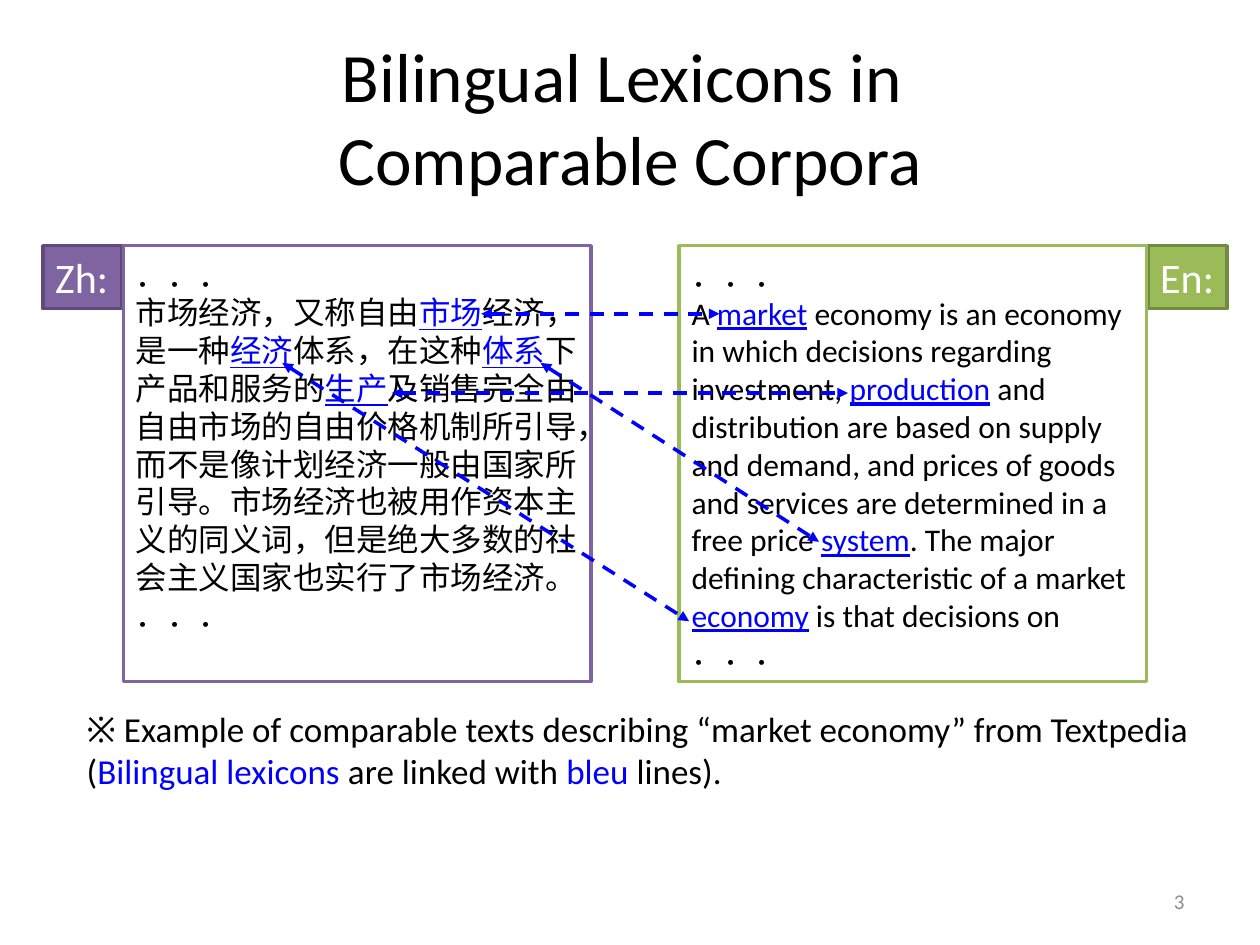
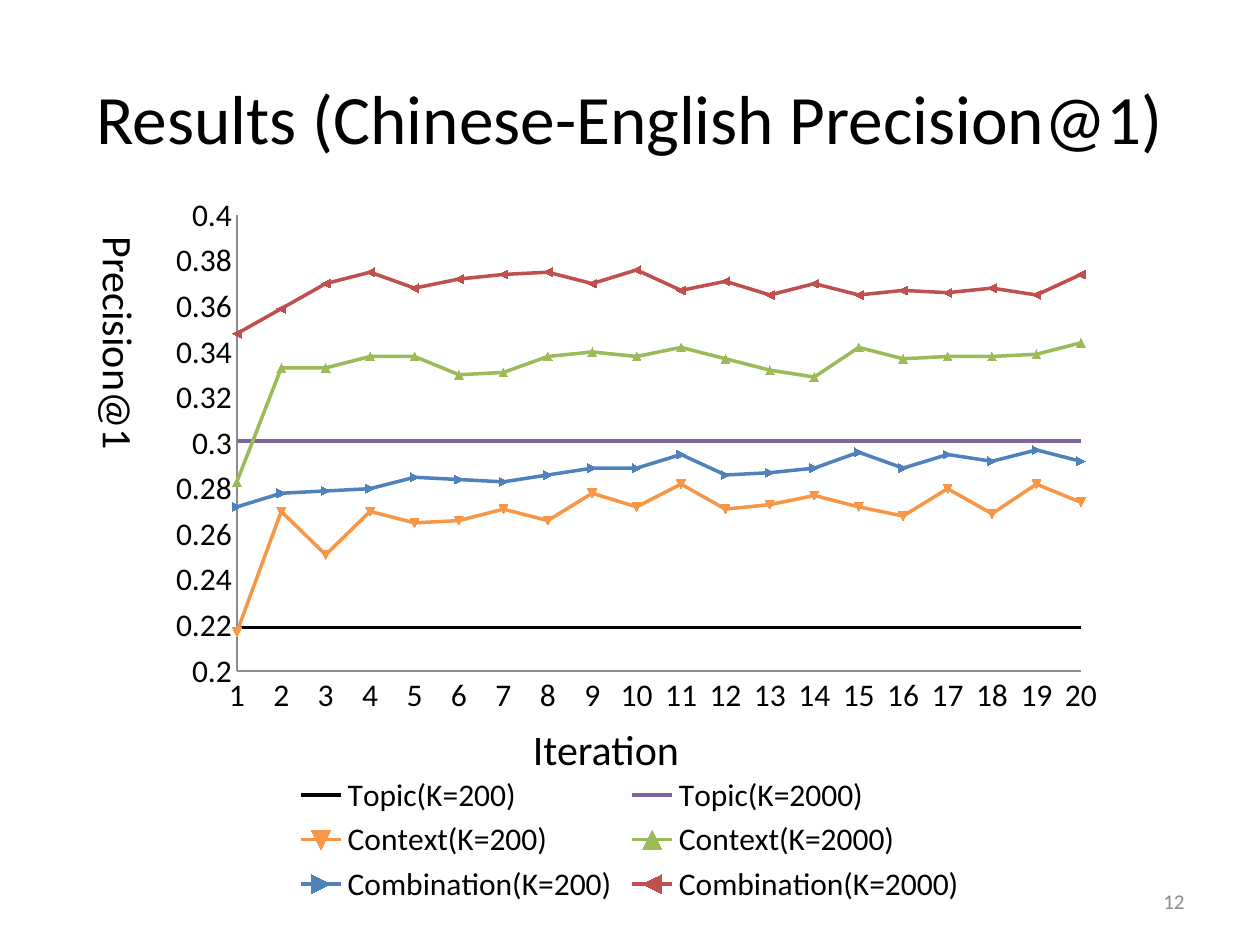
"""Build two slides on bilingual lexicons: linked sample texts and a results chart."""
from dataclasses import dataclass, field
from typing import Any, NamedTuple

import lxml.etree
import pptx
import pptx.chart.data
import pptx.dml.color
import pptx.enum.chart
import pptx.enum.dml
import pptx.enum.shapes
import pptx.enum.text
import pptx.oxml.ns
import pptx.slide
import pptx.util

Pt = pptx.util.Pt
qn = pptx.oxml.ns.qn
ALIGN = pptx.enum.text.PP_ALIGN
ANCHOR = pptx.enum.text.MSO_ANCHOR
HUES = {
    "black": "000000", "white": "FFFFFF", "gray": "8C8C8C", "link": "0000FF",
    "plum": "8064A2", "plum_edge": "5F4A78", "green": "9BBB59", "green_edge": "738A42",
    "orange": "F79646", "blue": "4F81BD", "red": "C0504D",
}
LATIN, ASIAN = "Calibri", "Noto Sans CJK SC"
ROW = 21.6
TOP = 140.4
MIDDLE = {"vertical_anchor": ANCHOR.MIDDLE}
NO_WRAP = {"word_wrap": False}


@dataclass
class Box:
    """Text area; parts of the text between asterisks take the link colour."""
    x: float
    y: float
    w: float
    h: float
    text: list[str]
    size: float
    ink: str = "black"
    fill: str = ""
    edge: str = ""
    under: bool = False
    turn: str = ""
    frame: dict[str, Any] = field(default_factory=dict)
    para: dict[str, Any] = field(default_factory=dict)


class Link(NamedTuple):
    """Two-headed arrow between matching words."""
    x1: float
    y1: float
    x2: float
    y2: float


class Curve(NamedTuple):
    """One line of the chart."""
    name: str
    hue: str
    vals: list[float]
    mark: bool = True


LINKS = [
    Link(275, 179.3, 411.1, 179.3),
    Link(223.9, 224.6, 484.6, 224.6),
    Link(308.9, 207.4, 468, 309.6),
    Link(161.3, 207.4, 393.8, 355),
]
ZH = ("市场经济，又称自由*市场*经济，是一种*经济*体系，在这种*体系*下产品和服务的*生产*及销售完全由"
      "自由市场的自由价格机制所引导，而不是像计划经济一般由国家所引导。市场经济也被用作资本主义的同义词，"
      "但是绝大多数的社会主义国家也实行了市场经济。")
EN = ("A *market* economy is an economy in which decisions regarding investment, *production* and "
      "distribution are based on supply and demand, and prices of goods and services are determined "
      "in a free price *system*. The major defining characteristic of a market *economy* is that "
      "decisions on")
NOTE = ("※ Example of comparable texts describing “market economy” from Textpedia "
        "(*Bilingual lexicons *are linked with *bleu *lines).")
CURVES = [
    Curve("Topic(K=200)", "black", [0.219] * 20, False),
    Curve("Topic(K=2000)", "plum", [0.301] * 20, False),
    Curve("Context(K=200)", "orange", [
        0.217, 0.27, 0.251, 0.27, 0.265, 0.266, 0.271, 0.266, 0.278, 0.272,
        0.282, 0.271, 0.273, 0.277, 0.272, 0.268, 0.28, 0.269, 0.282, 0.274]),
    Curve("Context(K=2000)", "green", [
        0.283, 0.333, 0.333, 0.338, 0.338, 0.33, 0.331, 0.338, 0.34, 0.338,
        0.342, 0.337, 0.332, 0.329, 0.342, 0.337, 0.338, 0.338, 0.339, 0.344]),
    Curve("Combination(K=200)", "blue", [
        0.272, 0.278, 0.279, 0.28, 0.285, 0.284, 0.283, 0.286, 0.289, 0.289,
        0.295, 0.286, 0.287, 0.289, 0.296, 0.289, 0.295, 0.292, 0.297, 0.292]),
    Curve("Combination(K=2000)", "red", [
        0.348, 0.359, 0.37, 0.375, 0.368, 0.372, 0.374, 0.375, 0.37, 0.376,
        0.367, 0.371, 0.365, 0.37, 0.365, 0.367, 0.366, 0.368, 0.365, 0.374]),
]


def tint(name: str) -> pptx.dml.color.RGBColor:
    """Return a named colour."""
    return pptx.dml.color.RGBColor.from_string(HUES[name])


def apply(item: Any, vals: dict[str, Any]) -> None:
    """Set each format value on an object."""
    for key, val in vals.items():
        setattr(item, key, val)


def paint(fill: Any, name: str) -> None:
    """Give a solid colour to a fill."""
    fill.solid()
    fill.fore_color.rgb = tint(name)


def stroke(line: Any, name: str, width: float = 2) -> None:
    """Give a colour and a width to a line."""
    paint(line.fill, name)
    line.width = Pt(width)


def add_run(para: Any, text: str, box: Box, linked: bool) -> None:
    """Add one styled run to a paragraph."""
    run = para.add_run()
    run.text = text
    apply(run.font, {"size": Pt(box.size), "name": LATIN})
    if linked and box.under:
        run.font.underline = True
    paint(run.font.fill, "link" if linked else box.ink)
    lxml.etree.SubElement(run.font._element, qn("a:ea"), typeface=ASIAN)


def add_box(slide: pptx.slide.Slide, box: Box) -> None:
    """Draw a text area, with fill and edge if it has them."""
    place = [Pt(v) for v in (box.x, box.y, box.w, box.h)]
    if box.fill:
        shape = slide.shapes.add_shape(pptx.enum.shapes.MSO_SHAPE.RECTANGLE, *place)
        shape.shadow.inherit = False
        paint(shape.fill, box.fill)
        stroke(shape.line, box.edge)
    else:
        shape = slide.shapes.add_textbox(*place)
    frame = shape.text_frame
    apply(frame, {"word_wrap": True, "vertical_anchor": ANCHOR.TOP} | box.frame)
    if box.turn:
        frame._txBody.bodyPr.set("vert", box.turn)
    for i, text in enumerate(box.text):
        para = frame.add_paragraph() if i else frame.paragraphs[0]
        apply(para, {"alignment": ALIGN.LEFT} | box.para)
        for j, part in enumerate(text.split("*")):
            for k, row in enumerate(part.split("\v")):
                if k:
                    para.add_line_break()
                if row:
                    add_run(para, row, box, j % 2 == 1)


def add_link(slide: pptx.slide.Slide, link: Link) -> None:
    """Draw a dashed arrow with a head at each end."""
    kind = pptx.enum.shapes.MSO_CONNECTOR.STRAIGHT
    arrow = slide.shapes.add_connector(kind, *[Pt(v) for v in link])
    stroke(arrow.line, "link")
    arrow.line.dash_style = pptx.enum.dml.MSO_LINE.DASH
    for end in ("a:headEnd", "a:tailEnd"):
        lxml.etree.SubElement(arrow.line._get_or_add_ln(), qn(end), type="triangle")
    lxml.etree.SubElement(arrow._element.spPr, qn("a:effectLst"))


def set_plot(chart: Any) -> None:
    """Fix the inner plot area and start the lines on the value axis."""
    area = chart._chartSpace.chart.plotArea
    for old in area.findall(qn("c:layout")):
        area.remove(old)
    outer = lxml.etree.Element(qn("c:layout"))
    area.insert(0, outer)
    inner = lxml.etree.SubElement(outer, qn("c:manualLayout"))
    for tag, val in (("layoutTarget", "inner"), ("xMode", "edge"), ("yMode", "edge"),
                     ("x", "0.099"), ("y", "0.028"), ("w", "0.861"), ("h", "0.638")):
        lxml.etree.SubElement(inner, qn("c:" + tag), val=val)
    axis = chart.value_axis._element
    for old in axis.findall(qn("c:crossBetween")):
        axis.remove(old)
    cross = lxml.etree.Element(qn("c:crossBetween"), val="midCat")
    axis.find(qn("c:crosses")).addnext(cross)


def add_graph(slide: pptx.slide.Slide) -> None:
    """Draw the line chart of the results."""
    data = pptx.chart.data.CategoryChartData()
    data.categories = [str(n) for n in range(1, 21)]
    for curve in CURVES:
        data.add_series(curve.name, curve.vals)
    kinds = pptx.enum.chart
    place = [Pt(v) for v in (79.9, 111.6, 560.2, 408.2)]
    chart = slide.shapes.add_chart(kinds.XL_CHART_TYPE.LINE_MARKERS, *place, data).chart
    apply(chart, {"has_title": False, "has_legend": True})
    apply(chart.font, {"name": LATIN, "size": Pt(18)})
    chart.font.color.rgb = tint("black")
    apply(chart.legend, {"position": kinds.XL_LEGEND_POSITION.BOTTOM, "include_in_layout": False})
    set_plot(chart)
    none = kinds.XL_TICK_MARK.NONE
    for axis in (chart.category_axis, chart.value_axis):
        apply(axis, {"has_major_gridlines": False, "major_tick_mark": none, "minor_tick_mark": none})
        stroke(axis.format.line, "gray", 0.75)
        axis.tick_labels.font.size = Pt(18)
    apply(chart.value_axis, {"minimum_scale": 0.2, "maximum_scale": 0.4, "major_unit": 0.02})
    apply(chart.value_axis.tick_labels, {"number_format": "General", "number_format_is_linked": False})
    chart.plots[0].vary_by_categories = False
    for curve, line in zip(CURVES, chart.plots[0].series):
        line.smooth = False
        stroke(line.format.line, curve.hue)
        if curve.mark:
            line.marker.size = 5
            paint(line.marker.format.fill, curve.hue)
            stroke(line.marker.format.line, curve.hue, 0.75)
        else:
            line.marker.style = kinds.XL_MARKER_STYLE.NONE


def add_page(deck: Any, title: str, number: int) -> pptx.slide.Slide:
    """Add a blank slide with its title and number."""
    slide = deck.slides.add_slide(deck.slide_layouts[6])
    add_box(slide, Box(36, 21.6, 648, 90, [title], 39.6, frame=MIDDLE,
                       para={"alignment": ALIGN.CENTER}))
    add_box(slide, Box(516.2, 500.4, 167.8, 28.8, [str(number)], 12, "gray", frame=MIDDLE,
                       para={"alignment": ALIGN.RIGHT}))
    return slide


def add_panel(slide: pptx.slide.Slide, x: float, text: str, hue: str, foot: float) -> None:
    """Draw one sample text in a framed panel."""
    add_box(slide, Box(x, TOP, 267, 249.1, ["．．．", text, "．．．"], 18, fill="white", edge=hue,
                       under=True, frame=MIDDLE | {"margin_bottom": Pt(foot)},
                       para={"line_spacing": Pt(ROW)}))


def main() -> None:
    """Build and save the deck."""
    deck = pptx.Presentation()
    apply(deck, {"slide_width": Pt(720), "slide_height": Pt(540)})

    texts = add_page(deck, "Bilingual Lexicons in \vComparable Corpora", 3)
    for x, tag, hue in ((24.5, "Zh:", "plum"), (655.9, "En:", "green")):
        add_box(texts, Box(x, TOP, 45.4, 36, [tag], 24, "white", hue, hue + "_edge", frame=NO_WRAP))
    add_panel(texts, 70.6, ZH, "plum", 3.6 + ROW)
    add_panel(texts, 388.1, EN, "green", 3.6)
    add_box(texts, Box(42.5, 401, 652.3, 55.4, [NOTE], 20))
    for link in LINKS:
        add_link(texts, link)

    graph = add_page(deck, "Results (Chinese-English Precision@1)", 12)
    add_graph(graph)
    add_box(graph, Box(42.5, 128.2, 43.9, 136.1, ["Precision@1"], 24, turn="eaVert", frame=NO_WRAP))
    add_box(graph, Box(297.4, 409.7, 100.1, 36, ["Iteration"], 24, frame=NO_WRAP))
    deck.save("out.pptx")


if __name__ == "__main__":
    main()
